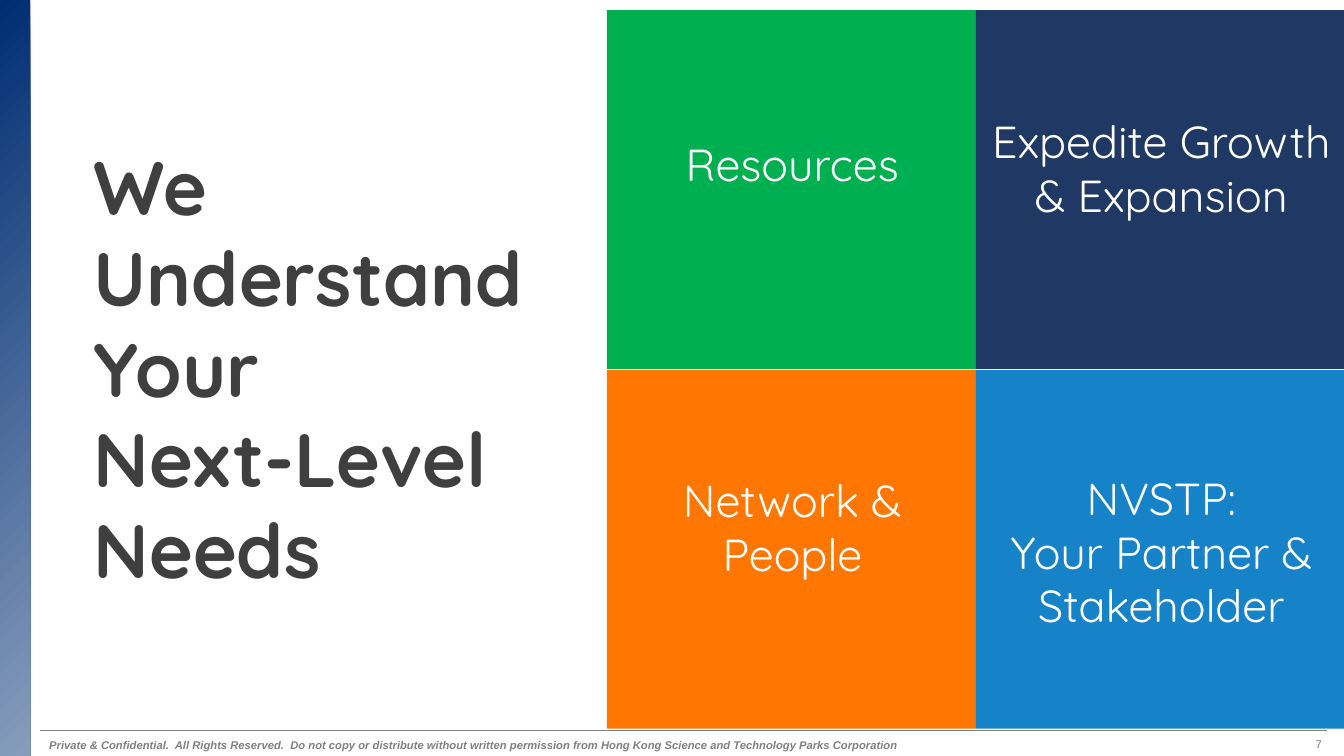
from lxml import etree
from pptx import Presentation
from pptx.dml.color import RGBColor
from pptx.enum.shapes import MSO_CONNECTOR, MSO_SHAPE
from pptx.enum.text import MSO_ANCHOR, PP_ALIGN
from pptx.oxml.ns import qn
from pptx.util import Inches, Pt

RECTANGLE = MSO_SHAPE.RECTANGLE
STRAIGHT = MSO_CONNECTOR.STRAIGHT
LEFT, CENTER, RIGHT = PP_ALIGN.LEFT, PP_ALIGN.CENTER, PP_ALIGN.RIGHT
TOP, MIDDLE = MSO_ANCHOR.TOP, MSO_ANCHOR.MIDDLE

HEADLINE = "We Understand Your\nNext-Level Needs"
NOTICE = (
    "Private & Confidential.\u00a0 All Rights Reserved. \u00a0Do not copy or distribute "
    "without written permission from Hong Kong Science and Technology Parks Corporation"
)
TILES = [
    [("Resources", "00B050", 1.21), ("Expedite Growth & Expansion", "203864", 0.98)],
    [("Network & People", "FF7600", 0.97),
     ("NVSTP:\nYour Partner & Stakeholder", "1682C7", 0.95)],
]


def color(value):
    """Return the colour for a hex string."""
    return RGBColor.from_string(value)


def add_text(slide, text, left, top, width, height, *, size, ink, font="Quicksand",
             bold=False, italic=False, align=LEFT, anchor=TOP, margins=(0.1, 0.05)):
    """Add a wrapped text box with one paragraph per line of text."""
    shape = slide.shapes.add_textbox(Inches(left), Inches(top), Inches(width), Inches(height))
    frame = shape.text_frame
    frame.word_wrap = True
    frame.vertical_anchor = anchor
    frame.margin_left = frame.margin_right = Inches(margins[0])
    frame.margin_top = frame.margin_bottom = Inches(margins[1])
    frame.text = text
    for paragraph in frame.paragraphs:
        paragraph.alignment = align
        paragraph.font.name = font
        paragraph.font.size = Pt(size)
        paragraph.font.bold = bold
        paragraph.font.italic = italic
        paragraph.font.color.rgb = color(ink)
    return shape


def add_rectangle(slide, left, top, width, height):
    """Add a rectangle without outline or shadow."""
    shape = slide.shapes.add_shape(
        RECTANGLE, Inches(left), Inches(top), Inches(width), Inches(height))
    shape.shadow.inherit = False
    shape.line.fill.background()
    return shape


def add_side_band(slide, left, top, width, height):
    """Add the diagonal blue gradient band along the slide edge."""
    fill = add_rectangle(slide, left, top, width, height).fill
    fill.gradient()
    fill.gradient_angle = 315
    for stop, position, shade in zip(fill.gradient_stops, (0, 0.99), ("002D72", "869CBC")):
        stop.position = position
        stop.color.rgb = color(shade)


def add_footer(slide, left, top, width):
    """Add the rule, the confidentiality notice and the page number."""
    rule = slide.shapes.add_connector(
        STRAIGHT, Inches(left), Inches(top), Inches(left + width), Inches(top))
    rule.line.color.rgb = color("808080")
    rule.line.width = Pt(0.5)
    etree.SubElement(rule._element.spPr, qn("a:effectLst"))
    add_text(slide, NOTICE, left - 0.01, top + 0.03, 12.2, 0.24,
             size=8, ink="808080", font="Arial", bold=True, italic=True)
    add_text(slide, "7", left + width - 0.52, top, 0.52, 0.26, size=8, ink="6D7783",
             font="Arial", align=RIGHT, anchor=MIDDLE, margins=(0.05, 0.03))


def add_tiles(slide, left, top, width, height):
    """Add the grid of coloured tiles, each with its label."""
    column_width, row_height = width / 2, height / 2
    for row, tiles in enumerate(TILES):
        for column, (label, shade, offset) in enumerate(tiles):
            x, y = left + column * column_width, top + row * row_height
            tile = add_rectangle(slide, x, y, column_width, row_height - 0.01)
            tile.fill.solid()
            tile.fill.fore_color.rgb = color(shade)
            add_text(slide, label, x + 0.01, y + offset, column_width, 1.66,
                     size=32, ink="FFFFFF", align=CENTER)


def main():
    """Build the slide and save the presentation."""
    presentation = Presentation()
    presentation.slide_width, presentation.slide_height = Inches(13.33), Inches(7.5)
    slide = presentation.slides.add_slide(presentation.slide_layouts[6])
    add_side_band(slide, 0, 0, 0.3, 7.5)
    add_footer(slide, 0.4, 7.25, 12.76)
    add_tiles(slide, 6.02, 0.1, 7.32, 7.14)
    add_text(slide, HEADLINE, 0.83, 1.34, 4.92, 4.64, size=54, ink="3F3F3F", bold=True)
    presentation.save("out.pptx")


if __name__ == "__main__":
    main()
